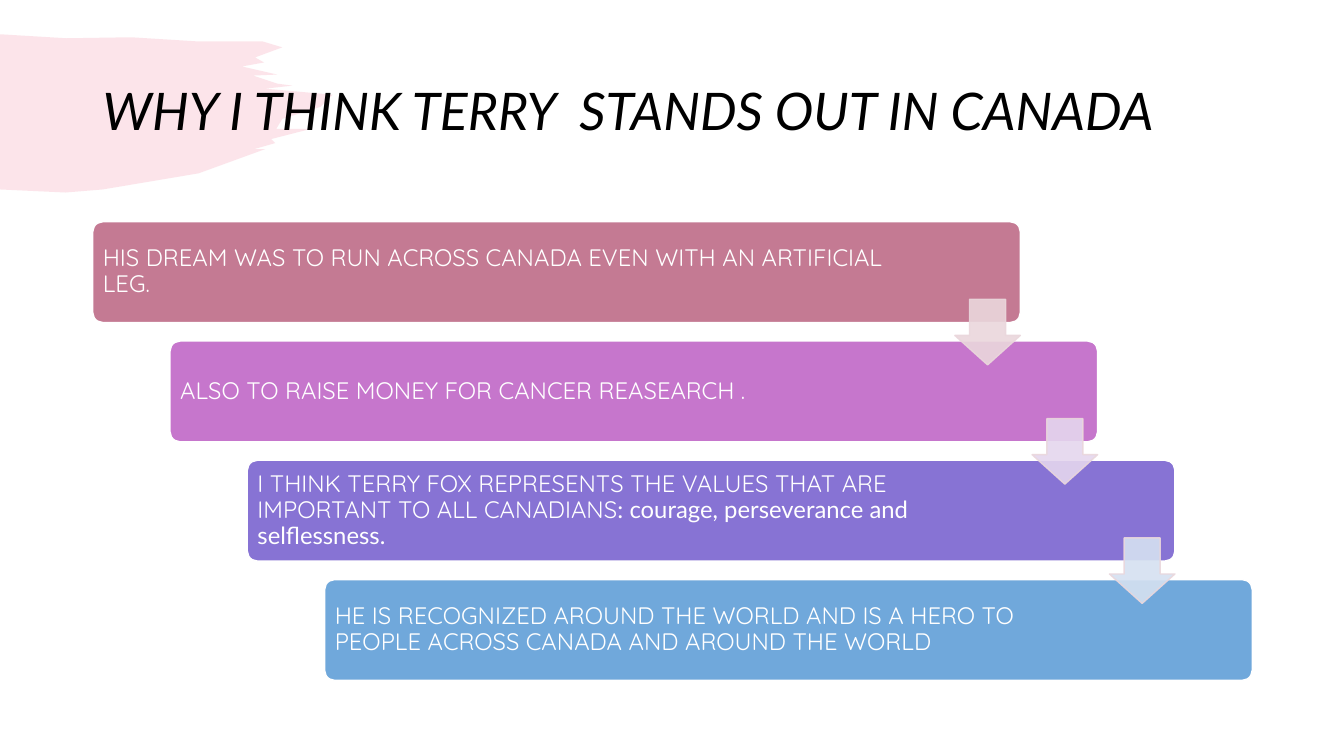
import pptx
import pptx.util
import pptx.dml.color
import pptx.enum.shapes
import pptx.enum.text
import pptx.oxml
import pptx.oxml.ns
from dataclasses import dataclass

Inches = pptx.util.Inches
SHAPES = pptx.enum.shapes.MSO_SHAPE


@dataclass(frozen=True)
class Theme:
    heading_font: str = "Lato"
    body_font: str = "Quicksand"
    title_size: int = 37
    body_size: int = 17
    black: str = "000000"
    white: str = "FFFFFF"
    brush: str = "F07C98"
    bars: tuple = ("C47A93", "C676CC", "8773D4", "70A8DB")
    arrows: tuple = ("EAD7DC", "E5D6EE", "D5E1F1")
    arrow_line: str = "EAD7DC"


# Brush stroke: top edge, bristles on the right, bottom edge
BRUSH = [
    (0, 0.34), (0.66, 0.38), (1.3, 0.37), (1.94, 0.41), (2.6, 0.41), (2.8, 0.47),
    (2.53, 0.57), (2.62, 0.62), (2.4, 0.66), (2.75, 0.74), (2.51, 0.75),
    (2.75, 0.83), (2.9, 0.85), (2.63, 0.88), (3.3, 0.94), (3.18, 1.06),
    (2.8, 1.18), (2.74, 1.28), (3.08, 1.28), (2.69, 1.38), (2.73, 1.42),
    (2.52, 1.48), (2.63, 1.48), (1.97, 1.72), (1.02, 1.88), (0.65, 1.91), (0, 1.88),
]


class SlideBuilder:
    def __init__(self, slide, theme):
        self.slide = slide
        self.theme = theme

    def paint(self, fill, color, opacity=100):
        fill.solid()
        fill.fore_color.rgb = pptx.dml.color.RGBColor.from_string(color)
        if opacity < 100:
            qn = pptx.oxml.ns.qn
            for clr in fill._xPr.iter(qn("a:srgbClr")):
                alpha = clr.makeelement(qn("a:alpha"), {"val": str(opacity * 1000)})
                clr.append(alpha)

    def shape(self, kind, box, adjustments, color, line, opacity=100):
        sp = self.slide.shapes.add_shape(kind, *map(Inches, box))
        sp.shadow.inherit = False
        for i, value in enumerate(adjustments):
            sp.adjustments[i] = value
        self.paint(sp.fill, color, opacity)
        sp.line.width = pptx.util.Pt(1)
        self.paint(sp.line.fill, line, opacity)

    def outline(self, points, color, opacity):
        pts = [(Inches(x), Inches(y)) for x, y in points]
        fb = self.slide.shapes.build_freeform(*pts[0])
        fb.add_line_segments(pts[1:], close=True)
        sp = fb.convert_to_shape()
        sp.shadow.inherit = False
        self.paint(sp.fill, color, opacity)
        sp.line.fill.background()

    def text(self, box, runs, size, color, italic=False, inset=None):
        """Add a text box; runs are (text, font name) pairs."""
        tf = self.slide.shapes.add_textbox(*map(Inches, box)).text_frame
        tf.word_wrap = True
        tf.vertical_anchor = pptx.enum.text.MSO_ANCHOR.MIDDLE
        if inset is not None:
            tf.margin_left = tf.margin_right = Inches(inset)
            tf.margin_top = tf.margin_bottom = Inches(inset)
        p = tf.paragraphs[0]
        p.line_spacing = 0.9
        for text, font in runs:
            r = p.add_run()
            r.text = text
            r.font.name = font
            r.font.size = pptx.util.Pt(size)
            r.font.italic = italic
            r.font.color.rgb = pptx.dml.color.RGBColor.from_string(color)


def main():
    prs = pptx.Presentation()
    prs.slide_width, prs.slide_height = Inches(13.33), Inches(7.5)
    theme = Theme()
    s = SlideBuilder(prs.slides.add_slide(prs.slide_layouts[6]), theme)

    # Brush stroke and title
    s.outline(BRUSH, theme.brush, 20)
    s.text((0.92, 0.4, 11.5, 1.45),
           [("WHY I THINK TERRY  STANDS OUT IN CANADA", theme.heading_font)],
           theme.title_size, theme.black, italic=True)

    # Staircase of reasons
    body, heading = theme.body_font, theme.heading_font
    reasons = [
        [("HIS DREAM WAS TO RUN ACROSS CANADA EVEN WITH AN ARTIFICIAL LEG.", body)],
        [("ALSO TO RAISE MONEY FOR CANCER REASEARCH .", body)],
        [("I THINK TERRY FOX REPRESENTS THE VALUES THAT ARE IMPORTANT "
          "TO ALL CANADIANS", body),
         (": courage, perseverance and selflessness.", heading)],
        [("HE IS RECOGNIZED AROUND THE WORLD AND IS A HERO TO PEOPLE "
          "ACROSS CANADA AND AROUND THE WORLD", body)],
    ]
    corners = [(0.92 + 2.3 * i / 3, 2.2 + 3.55 * i / 3) for i in range(len(reasons))]
    for i, ((x, y), runs) in enumerate(zip(corners, reasons)):
        s.shape(SHAPES.ROUNDED_RECTANGLE, (x, y, 9.2, 1), [0.1],
                theme.bars[i], theme.white)
        width = 8.04 if i == 0 else 7.72
        s.text((x + 0.03, y + 0.03, width, 0.94), runs,
               theme.body_size, theme.white, inset=0.07)

    # Arrows from each step to the next
    for (x, y), color in zip(corners, theme.arrows):
        s.shape(SHAPES.DOWN_ARROW, (x + 8.55, y + 0.77, 0.65, 0.65), [0.55, 0.45],
                color, theme.arrow_line, opacity=90)

    prs.save("out.pptx")


if __name__ == "__main__":
    main()
